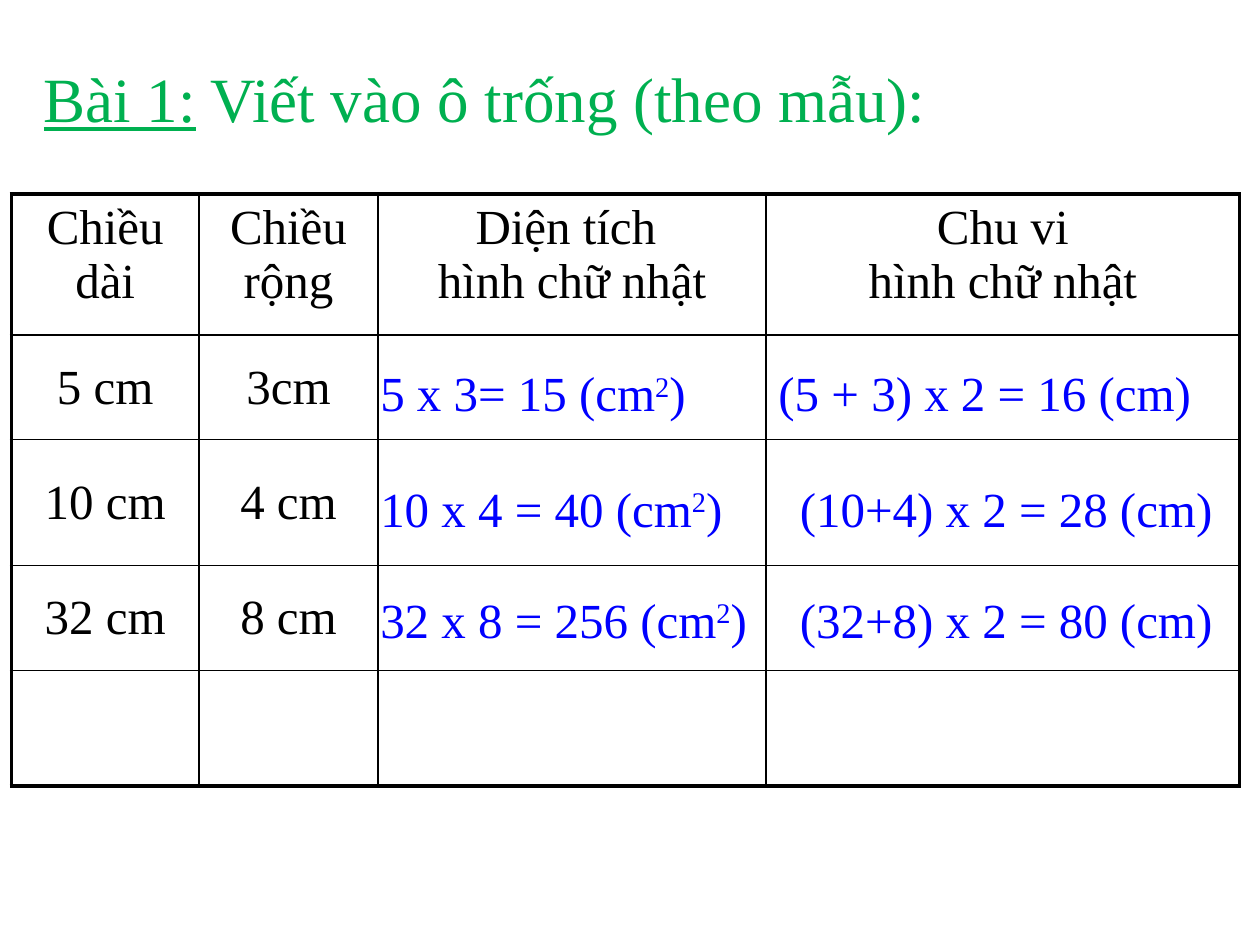
from lxml.etree import SubElement
from pptx import Presentation
from pptx.dml.color import RGBColor
from pptx.enum.text import MSO_ANCHOR, PP_ALIGN
from pptx.oxml.ns import qn
from pptx.util import Inches, Pt

FONT = "Times New Roman"
GREEN = RGBColor(0x00, 0xB0, 0x50)
BLUE = RGBColor(0x00, 0x00, 0xFF)
BLACK = RGBColor(0x00, 0x00, 0x00)

# Content: a run is (text, style), a table cell is a list of lines
TITLE = [("Bài 1:", "underline"), (" Viết vào ô trống (theo mẫu):", "")]
TABLE = [
    [["Chiều dài"], ["Chiều rộng"], ["Diện tích ", "hình chữ nhật"], ["Chu vi", "hình chữ nhật"]],
    [["5 cm"], ["3cm"], [], []],
    [["10 cm"], ["4 cm"], [], []],
    [["32 cm"], ["8 cm"], [], []],
    [[], [], [], []],
]
# Each answer row: top, area, perimeter, perimeter left
ANSWERS = [
    (2.83, "5 x 3= 15 (cm", "(5 + 3) x 2 = 16 (cm)", 6.08),
    (3.75, "10 x 4 = 40 (cm", "(10+4) x 2 = 28 (cm)", 6.25),
    (4.63, "32 x 8 = 256 (cm", "(32+8) x 2 = 80 (cm)", 6.25),
]

# Layout in inches
COLUMNS = [1.49, 1.42, 3.08, 3.76]
ROWS = [1.12, 0.83, 1, 0.83, 0.92]
TABLE_LEFT, TABLE_TOP = 0.09, 1.54
AREA_LEFT = 2.92
ANSWER_HEIGHT = 0.57
OUTER, INNER = 2.25, 1


def write_text(frame, lines, size=28, color=BLACK, align=PP_ALIGN.LEFT):
    """Fill a text frame with lines, each a list of (text, style) runs."""
    for index, runs in enumerate(lines):
        paragraph = frame.paragraphs[0] if index == 0 else frame.add_paragraph()
        paragraph.alignment = align
        for text, style in runs:
            run = paragraph.add_run()
            run.text = text
            run.font.name = FONT
            run.font.size = Pt(size)
            run.font.color.rgb = color
            if style == "underline":
                run.font.underline = True
            elif style == "superscript":
                run.font._element.set("baseline", "30000")


def add_text(slide, left, top, width, height, runs, **style):
    box = slide.shapes.add_textbox(*map(Inches, (left, top, width, height)))
    box.text_frame.word_wrap = True
    write_text(box.text_frame, [runs], **style)


def set_borders(cell, widths):
    """Draw black cell borders; widths maps L, R, T, B to points."""
    properties = cell._tc.get_or_add_tcPr()
    for side, width in widths.items():
        line = SubElement(properties, qn(f"a:ln{side}"), w=str(Pt(width)))
        fill = SubElement(line, qn("a:solidFill"))
        SubElement(fill, qn("a:srgbClr"), val=str(BLACK))


def add_grid(slide):
    shape = slide.shapes.add_table(
        len(ROWS), len(COLUMNS), Inches(TABLE_LEFT), Inches(TABLE_TOP),
        Inches(sum(COLUMNS)), Inches(sum(ROWS)))
    table = shape.table
    table.first_row = table.horz_banding = False
    for column, width in zip(table.columns, COLUMNS):
        column.width = Inches(width)
    for row, height in zip(table.rows, ROWS):
        row.height = Inches(height)
    last_row, last_column = len(ROWS) - 1, len(COLUMNS) - 1
    for r, row in enumerate(TABLE):
        for c, lines in enumerate(row):
            cell = table.cell(r, c)
            set_borders(cell, {
                "L": OUTER if c == 0 else INNER,
                "R": OUTER if c == last_column else INNER,
                "T": OUTER if r == 0 else INNER,
                "B": OUTER if r == last_row else INNER,
            })
            cell.fill.background()
            cell.vertical_anchor = MSO_ANCHOR.TOP if r == 0 else MSO_ANCHOR.MIDDLE
            write_text(cell.text_frame, [[(line, "")] for line in lines],
                       align=PP_ALIGN.CENTER)


def main():
    presentation = Presentation()
    presentation.slide_width, presentation.slide_height = Inches(10), Inches(7.5)
    slide = presentation.slides.add_slide(presentation.slide_layouts[6])

    # Heading and table
    add_text(slide, 0.25, 0.42, 9.17, 0.7, TITLE, size=36, color=GREEN)
    add_grid(slide)

    # Answers over the empty cells
    for top, area, perimeter, left in ANSWERS:
        area_runs = [(area, ""), ("2", "superscript"), (")", "")]
        add_text(slide, AREA_LEFT, top, 3.17, ANSWER_HEIGHT, area_runs, color=BLUE)
        add_text(slide, left, top, 3.75, ANSWER_HEIGHT, [(perimeter, "")], color=BLUE)

    presentation.save("out.pptx")


if __name__ == "__main__":
    main()
